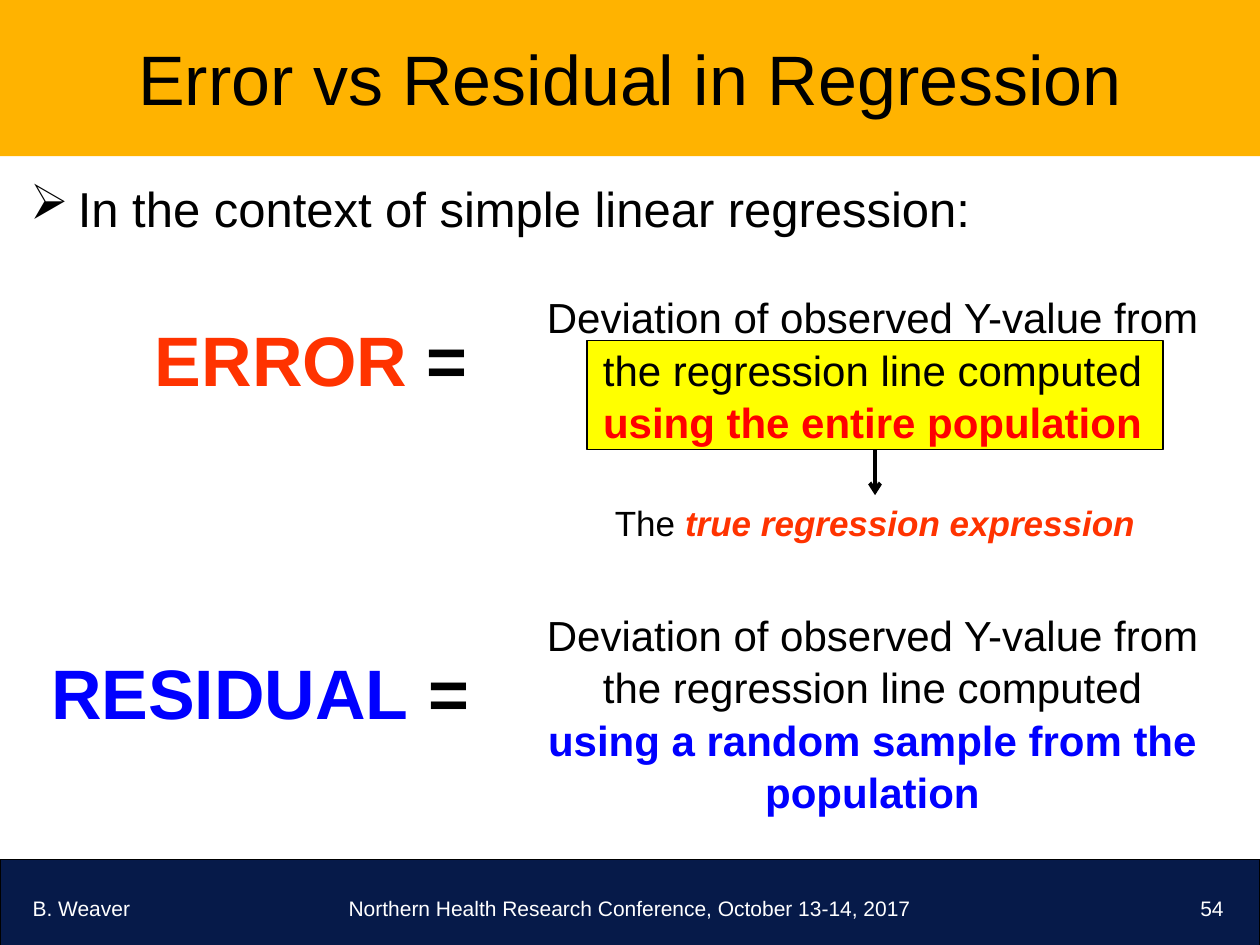
from dataclasses import dataclass

from lxml.etree import SubElement
from pptx import Presentation
from pptx.dml.color import RGBColor
from pptx.enum.shapes import MSO_CONNECTOR, MSO_SHAPE
from pptx.enum.text import MSO_ANCHOR, PP_ALIGN
from pptx.oxml.ns import qn
from pptx.util import Inches, Pt


@dataclass(frozen=True)
class Theme:
    font: str = "Arial"
    black: str = "000000"
    white: str = "FFFFFF"
    gold: str = "FFB300"
    navy: str = "061A49"
    yellow: str = "FFFF00"
    orange: str = "FF3300"
    red: str = "FF0000"
    blue: str = "0000FF"
    title: int = 40
    body: int = 28
    text: int = 24
    note: int = 20
    foot: int = 12


@dataclass(frozen=True)
class Box:
    left: float
    top: float
    width: float
    height: float

    def place(self) -> list:
        return [Inches(v) for v in (self.left, self.top, self.width, self.height)]


@dataclass(frozen=True)
class Run:
    text: str
    color: str = Theme.black
    bold: bool = False
    italic: bool = False


@dataclass(frozen=True)
class Label:
    box: Box
    size: int
    align: PP_ALIGN
    runs: tuple
    space: float = 1.0


@dataclass(frozen=True)
class Term:
    name: str
    hue: str
    name_box: Box
    text_box: Box
    ending: str
    accent: str


THEME = Theme()
LEFT, MID, RIGHT = PP_ALIGN.LEFT, PP_ALIGN.CENTER, PP_ALIGN.RIGHT

TERMS = (
    Term("ERROR", THEME.orange, Box(0.12, 2.46, 3.69, 0.77),
         Box(4.21, 2.25, 5.43, 1.31), "using the entire population", THEME.red),
    Term("RESIDUAL", THEME.blue, Box(0.13, 5.11, 3.69, 0.77),
         Box(4.21, 4.77, 5.43, 1.72),
         "using a random sample from the population", THEME.blue),
)

FOOTER = (
    Label(Box(0.16, 7.06, 1.22, 0.3), THEME.foot, LEFT,
          (Run("B. Weaver", THEME.white),)),
    Label(Box(2.4, 7.06, 5.2, 0.3), THEME.foot, MID,
          (Run("Northern Health Research Conference, October 13-14, 2017", THEME.white),)),
    Label(Box(7.76, 7.06, 2.05, 0.3), THEME.foot, RIGHT, (Run("54", THEME.white),)),
)


def write(frame, label: Label) -> None:
    frame.word_wrap = True
    para = frame.paragraphs[0]
    para.alignment = label.align
    para.line_spacing = label.space
    for part in label.runs:
        run = para.add_run()
        run.text = part.text
        font = run.font
        font.name = THEME.font
        font.size = Pt(label.size)
        font.bold = part.bold
        font.italic = part.italic
        font.color.rgb = RGBColor.from_string(part.color)


def add_text(slide, label: Label):
    shape = slide.shapes.add_textbox(*label.box.place())
    write(shape.text_frame, label)
    return shape


def add_rect(slide, box: Box, fill: str, edge: bool = True):
    shape = slide.shapes.add_shape(MSO_SHAPE.RECTANGLE, *box.place())
    shape.shadow.inherit = False
    shape.fill.solid()
    shape.fill.fore_color.rgb = RGBColor.from_string(fill)
    if edge:
        shape.line.color.rgb = RGBColor.from_string(THEME.black)
        shape.line.width = Pt(0.75)
    else:
        shape.line.fill.background()
    return shape


def add_title(slide, label: Label) -> None:
    shape = add_rect(slide, label.box, THEME.gold, edge=False)
    shape.text_frame.vertical_anchor = MSO_ANCHOR.MIDDLE
    write(shape.text_frame, label)


def add_bullet(slide, label: Label) -> None:
    shape = add_text(slide, label)
    props = shape.text_frame.paragraphs[0]._p.get_or_add_pPr()
    indent = Inches(0.38)
    props.set("marL", str(indent))
    props.set("indent", str(-indent))
    SubElement(props, qn("a:buChar"), char="➢")


def add_term(slide, term: Term) -> None:
    add_text(slide, Label(term.name_box, THEME.title, RIGHT, (
        Run(term.name, term.hue, bold=True), Run(" =", bold=True))))
    add_text(slide, Label(term.text_box, THEME.text, MID, (
        Run("Deviation of observed Y-value from the regression line computed "),
        Run(term.ending, term.accent, bold=True)), space=1.04))


def add_arrow(slide, x: float, top: float, end: float) -> None:
    line = slide.shapes.add_connector(
        MSO_CONNECTOR.STRAIGHT, Inches(x), Inches(top), Inches(x), Inches(end))
    line.line.color.rgb = RGBColor.from_string(THEME.black)
    line.line.width = Pt(2.25)
    SubElement(line.line._get_or_add_ln(), qn("a:tailEnd"), type="arrow")
    SubElement(line._element.spPr, qn("a:effectLst"))


def main() -> None:
    deck = Presentation()
    deck.slide_width, deck.slide_height = Inches(10), Inches(7.5)
    slide = deck.slides.add_slide(deck.slide_layouts[6])

    add_rect(slide, Box(0, 6.82, 10, 0.71), THEME.navy)
    for label in FOOTER:
        add_text(slide, label)

    mark = Box(4.66, 2.7, 4.57, 0.87)
    add_rect(slide, mark, THEME.yellow)
    add_title(slide, Label(Box(0, -0.01, 10, 1.25), THEME.title, MID,
                           (Run("Error vs Residual in Regression"),)))
    add_bullet(slide, Label(Box(0.14, 1.37, 9.73, 0.72), THEME.body, LEFT,
                            (Run("In the context of simple linear regression:"),)))
    for term in TERMS:
        add_term(slide, term)

    note = Box(mark.left, 3.93, mark.width, 0.44)
    add_text(slide, Label(note, THEME.note, MID, (
        Run("The "),
        Run("true regression expression", THEME.orange, bold=True, italic=True))))
    add_arrow(slide, mark.left + mark.width / 2, mark.top + mark.height, note.top)
    deck.save("out.pptx")


if __name__ == "__main__":
    main()
